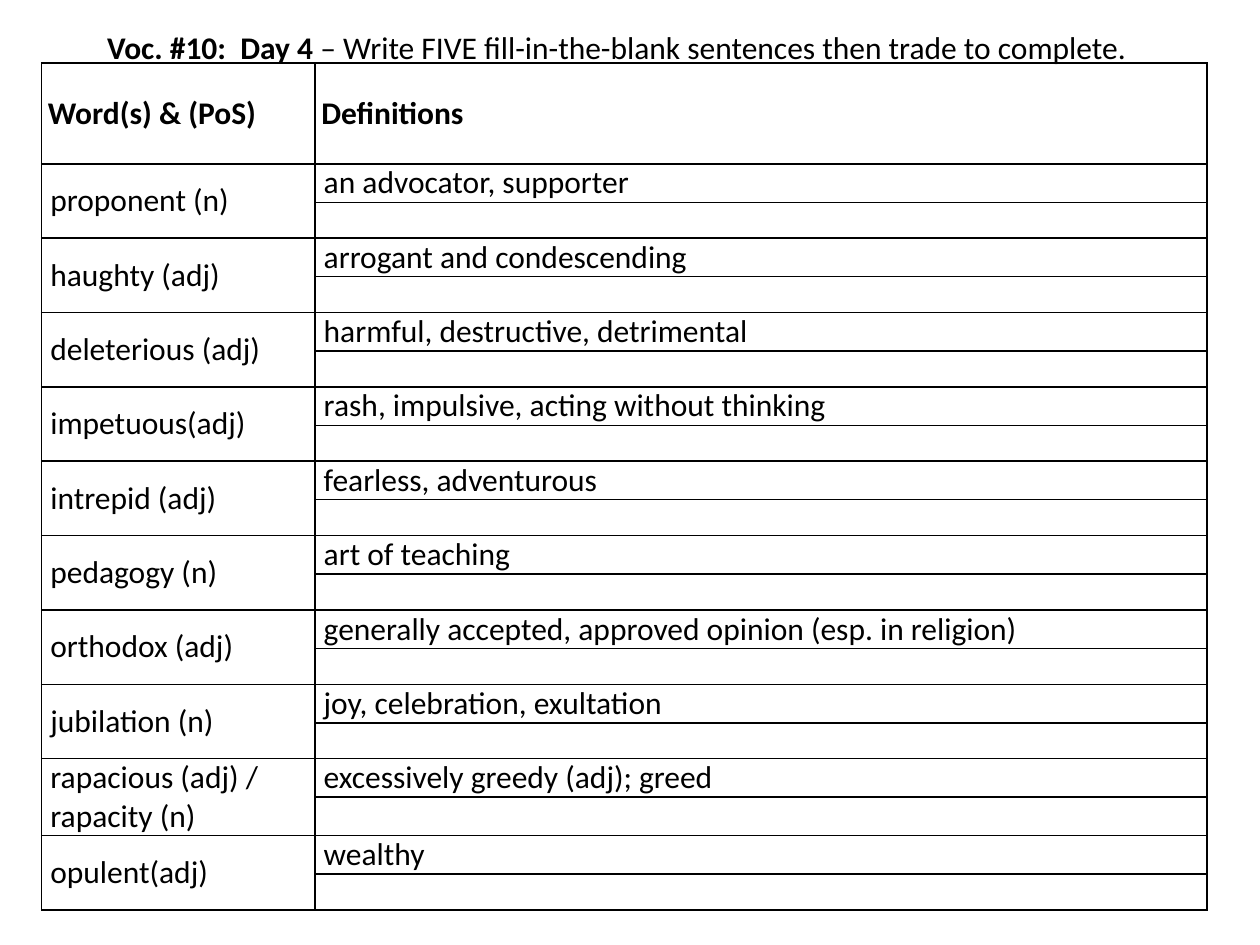
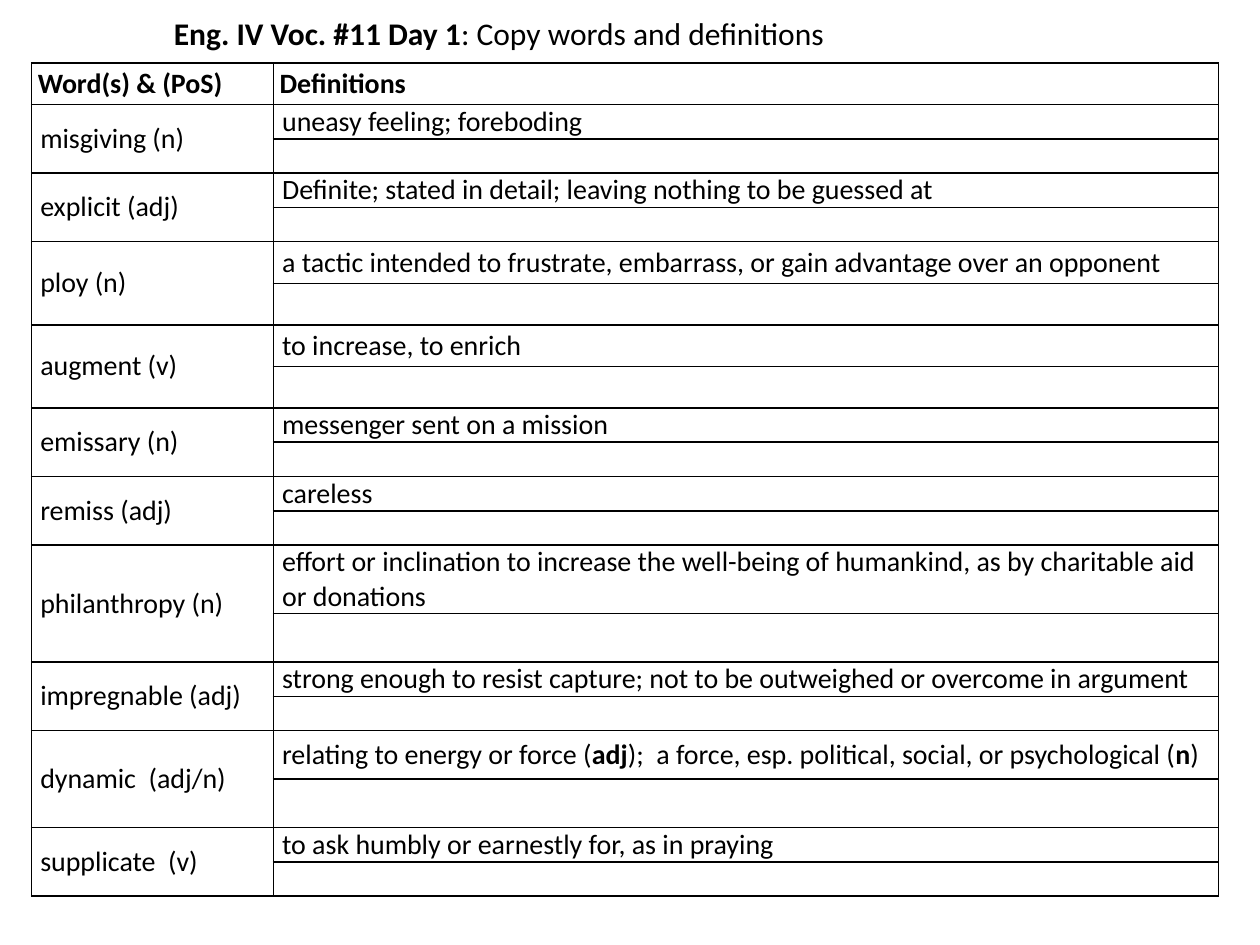
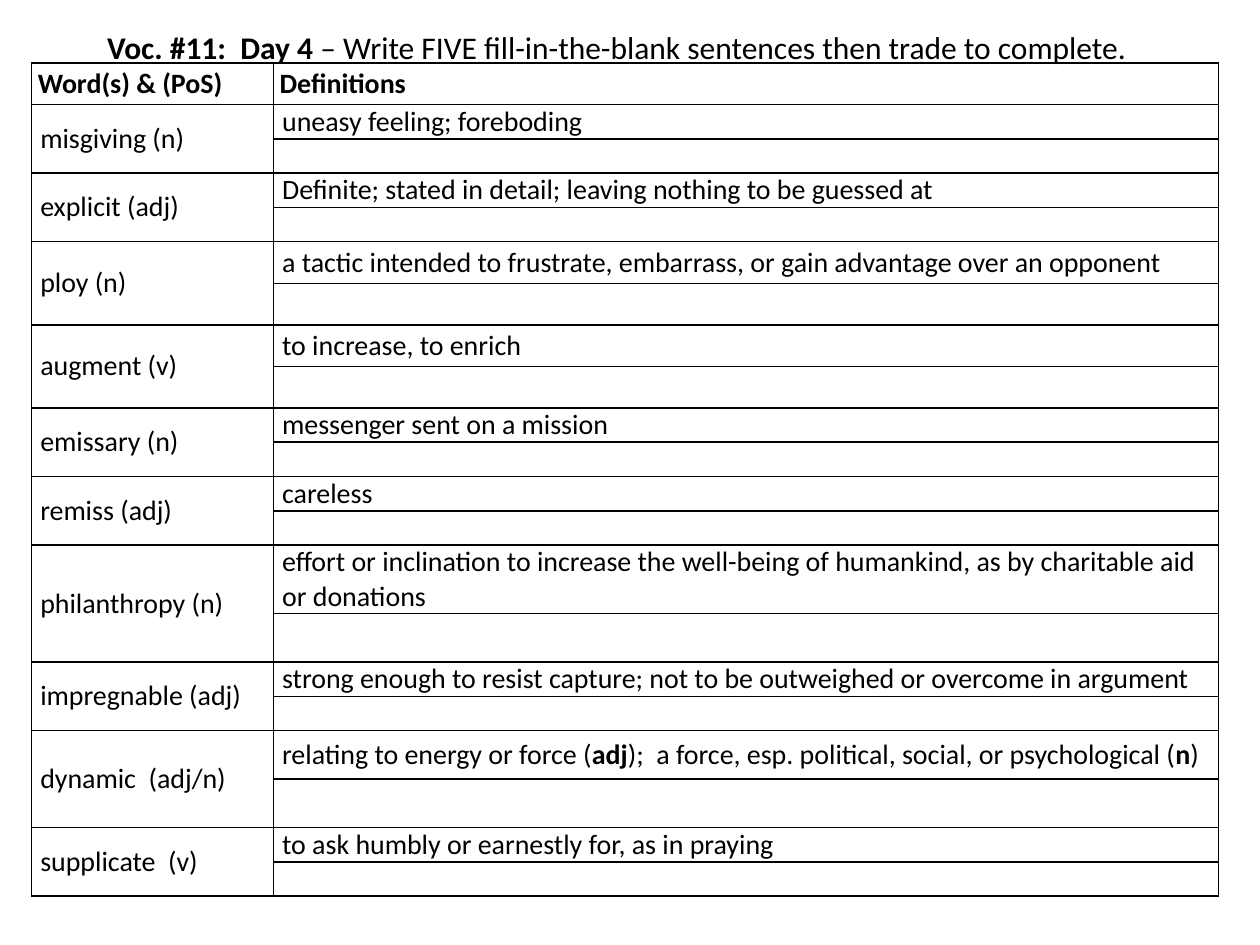
from dataclasses import dataclass

import pptx
import pptx.dml.color
import pptx.enum.text
import pptx.oxml
import pptx.oxml.ns
import pptx.presentation
import pptx.slide
import pptx.table
import pptx.text.text
import pptx.util

Inches = pptx.util.Inches
Pt = pptx.util.Pt
Align = pptx.enum.text.PP_ALIGN
MIDDLE = pptx.enum.text.MSO_ANCHOR.MIDDLE


@dataclass(frozen=True)
class Theme:
    font: str = "Calibri"
    ink: str = "000000"
    title_size: int = 18
    blank_size: int = 16
    border_width: int = 1
    header_inset: float = 0.05
    entry_inset: float = 0.07


@dataclass(frozen=True)
class Entry:
    """A word, its definition, and the height shared by its two rows."""
    word: str
    definition: str
    height: float


@dataclass(frozen=True)
class WordList:
    left: float
    word_width: float
    definition_width: float
    header_height: float
    text_size: int
    entries: tuple[Entry, ...]


@dataclass(frozen=True)
class TitleStyle:
    left: float
    top: float
    width: float
    height: float
    align: Align
    indent: float = 0


@dataclass(frozen=True)
class Page:
    title: str
    title_style: TitleStyle
    word_list: WordList


THEME = Theme()
TABLE_TOP = 0.5
HEADERS = ("Word(s) & (PoS)", "Definitions")
COPY_TITLE = TitleStyle(0, 0, 7.92, 0.53, Align.CENTER)
PRACTICE_TITLE = TitleStyle(0.25, 0.17, 8.83, 0.4, Align.LEFT, indent=0.5)
PRACTICE_TASK = "– Write FIVE fill-in-the-blank sentences then trade to complete."

EVEN = 0.57
SHORT, MEDIUM, TALL = 0.5, 0.66, 0.77

LIST_10 = WordList(0.33, 2.17, 7.08, 0.8, 18, (
    Entry("proponent (n)", "an advocator, supporter", EVEN),
    Entry("haughty (adj)", "arrogant and condescending", EVEN),
    Entry("deleterious (adj)", "harmful, destructive, detrimental", EVEN),
    Entry("impetuous(adj)", "rash, impulsive, acting without thinking", EVEN),
    Entry("intrepid (adj)", "fearless, adventurous", EVEN),
    Entry("pedagogy (n)", "art of teaching", EVEN),
    Entry("orthodox (adj)", "generally accepted, approved opinion (esp. in religion)", EVEN),
    Entry("jubilation (n)", "joy, celebration, exultation", EVEN),
    Entry("rapacious (adj) /\nrapacity (n)", "excessively greedy (adj); greed", EVEN),
    Entry("opulent(adj)", "wealthy", EVEN),
))

LIST_11 = WordList(0.25, 1.92, 7.5, 0.33, 16, (
    Entry("misgiving (n)", "uneasy feeling; foreboding", SHORT),
    Entry("explicit (adj)", "Definite; stated in detail; leaving nothing to be guessed at", SHORT),
    Entry("ploy (n)", "a tactic intended to frustrate, embarrass, or gain advantage "
          "over an opponent", MEDIUM),
    Entry("augment (v)", "to increase, to enrich", MEDIUM),
    Entry("emissary (n)", "messenger sent on a mission", SHORT),
    Entry("remiss (adj)", "careless", SHORT),
    Entry("philanthropy (n)", "effort or inclination to increase the well-being of humankind, "
          "as by charitable aid or donations", TALL),
    Entry("impregnable (adj)", "strong enough to resist capture; not to be outweighed "
          "or overcome in argument", SHORT),
    Entry("dynamic  (adj/n)", "relating to energy or force (*adj*);  a force, esp. political, "
          "social, or psychological (*n*)", TALL),
    Entry("supplicate  (v)", "to ask humbly or earnestly for, as in praying", SHORT),
))

PAGES = (
    Page(f"*Voc. #10:  Day 4 *{PRACTICE_TASK}", PRACTICE_TITLE, LIST_10),
    Page("*Eng. IV Voc. #11 Day 1*: Copy words and definitions", COPY_TITLE, LIST_11),
    Page(f"*Voc. #11:  Day 4 *{PRACTICE_TASK}", PRACTICE_TITLE, LIST_11),
)


def write_paragraph(paragraph: pptx.text.text._Paragraph, text: str, size: int) -> None:
    """Write text in the theme font; parts between asterisks are bold."""
    font = paragraph.font
    font.name = THEME.font
    font.size = Pt(size)
    font.bold = False
    font.color.rgb = pptx.dml.color.RGBColor.from_string(THEME.ink)
    for index, part in enumerate(text.split("*")):
        if part:
            run = paragraph.add_run()
            run.text = part
            if index % 2:
                run.font.bold = True


def add_borders(cell: pptx.table._Cell) -> None:
    properties = cell._tc.get_or_add_tcPr()
    for side in ("L", "R", "T", "B"):
        properties.append(pptx.oxml.parse_xml(
            f'<a:ln{side} {pptx.oxml.ns.nsdecls("a")} w="{Pt(THEME.border_width)}">'
            f'<a:solidFill><a:srgbClr val="{THEME.ink}"/></a:solidFill></a:ln{side}>'))


def write_cell(cell: pptx.table._Cell, text: str, size: int, inset: float) -> None:
    cell.vertical_anchor = MIDDLE
    cell.margin_left = cell.margin_right = Inches(inset)
    cell.margin_top = cell.margin_bottom = 0
    for index, line in enumerate(text.split("\n")):
        frame = cell.text_frame
        paragraph = frame.add_paragraph() if index else frame.paragraphs[0]
        write_paragraph(paragraph, line, size)


def add_title(slide: pptx.slide.Slide, text: str, style: TitleStyle) -> None:
    title = slide.shapes.title
    title.left, title.top = Inches(style.left), Inches(style.top)
    title.width, title.height = Inches(style.width), Inches(style.height)
    title.text_frame.vertical_anchor = MIDDLE
    paragraph = title.text_frame.paragraphs[0]
    paragraph.alignment = style.align
    write_paragraph(paragraph, text, THEME.title_size)
    paragraph._p.get_or_add_pPr().set("indent", str(Inches(style.indent)))


def add_word_table(slide: pptx.slide.Slide, word_list: WordList) -> None:
    """Draw a header row, then a definition row and a blank row for each word."""
    widths = (word_list.word_width, word_list.definition_width)
    heights = [word_list.header_height]
    for entry in word_list.entries:
        heights += [entry.height / 2] * 2
    table = slide.shapes.add_table(
        len(heights), len(widths), Inches(word_list.left), Inches(TABLE_TOP),
        Inches(sum(widths)), Inches(sum(heights))).table
    table.first_row = table.horz_banding = False
    for column, width in zip(table.columns, widths):
        column.width = Inches(width)
    for row, height in zip(table.rows, heights):
        row.height = Inches(height)
    for cell in table.iter_cells():
        add_borders(cell)
        cell.fill.background()

    size = word_list.text_size
    for column_index, header in enumerate(HEADERS):
        write_cell(table.cell(0, column_index), f"*{header}*", size, THEME.header_inset)
    for index, entry in enumerate(word_list.entries):
        top = 1 + 2 * index
        table.cell(top, 0).merge(table.cell(top + 1, 0))
        write_cell(table.cell(top, 0), entry.word, size, THEME.entry_inset)
        write_cell(table.cell(top, 1), entry.definition, size, THEME.entry_inset)
        write_cell(table.cell(top + 1, 1), "", THEME.blank_size, THEME.entry_inset)


def add_page(presentation: pptx.presentation.Presentation, page: Page) -> None:
    title_only = presentation.slide_layouts.get_by_name("Title Only")
    slide = presentation.slides.add_slide(title_only)
    add_title(slide, page.title, page.title_style)
    add_word_table(slide, page.word_list)


def main() -> None:
    presentation = pptx.Presentation()
    presentation.slide_width, presentation.slide_height = Inches(10), Inches(7.5)
    for page in PAGES:
        add_page(presentation, page)
    presentation.save("out.pptx")


if __name__ == "__main__":
    main()
